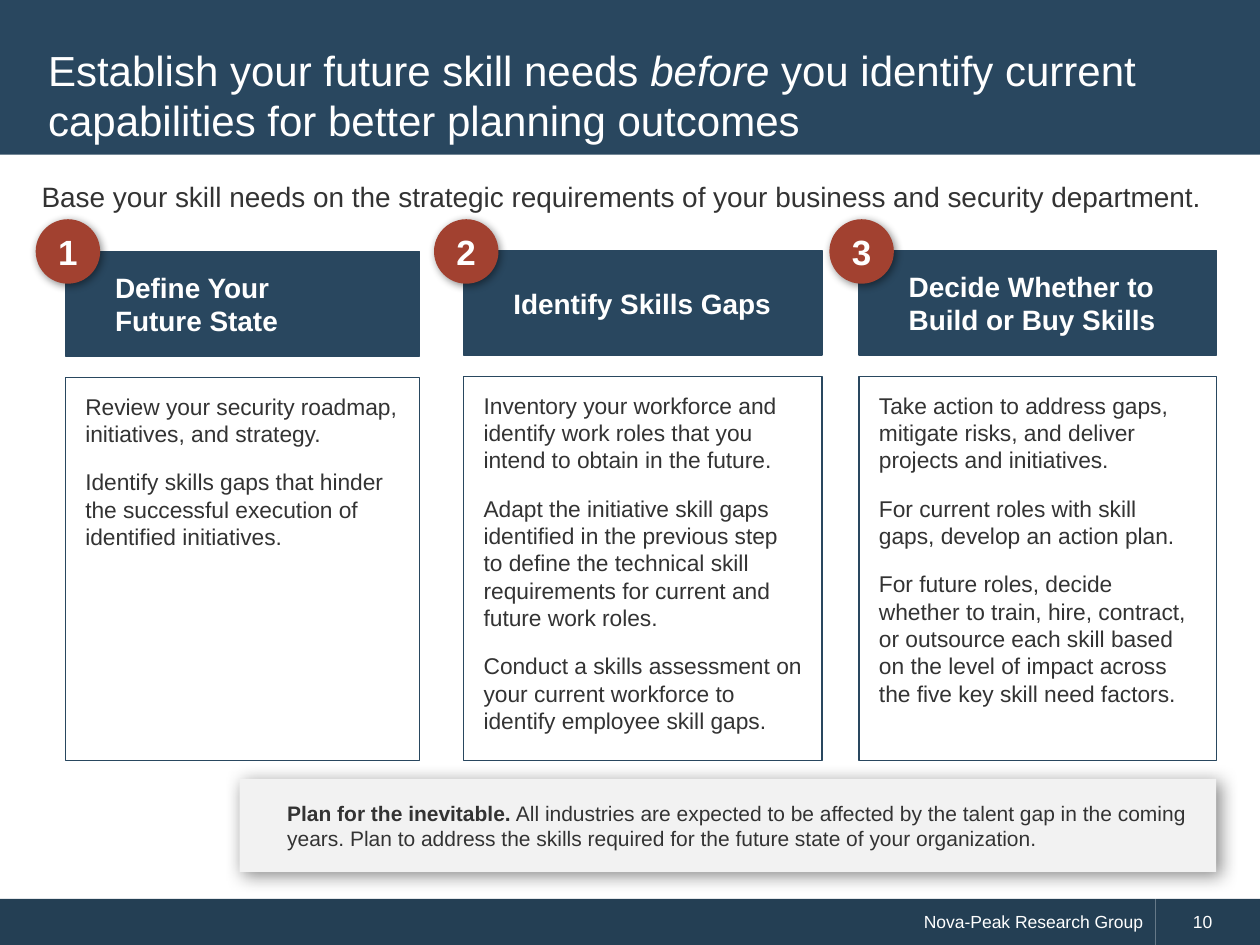
from lxml import etree
from pptx import Presentation
from pptx import util as u
from pptx.dml.color import RGBColor
from pptx.enum import shapes, text
from pptx.oxml import ns

TITLE = [("Establish your future skill needs ", ""), ("before", "i"),
         (" you identify current capabilities for better planning outcomes", "")]
LEAD = "Base your skill needs on the strategic requirements of your business and security department."
STEPS = [
    {"left": 1.32, "width": 7.14, "top": 5.07, "opacity": 88,
     "heading": ["Define Your", "Future State"],
     "actions": ["Review your security roadmap, initiatives, and strategy.",
                 "Identify skills gaps that hinder the successful execution of identified initiatives."]},
    {"left": 9.35, "width": 7.22, "top": 5.05, "opacity": 91,
     "heading": ["Identify Skills Gaps"],
     "actions": ["Inventory your workforce and identify work roles that you intend to obtain in the future.",
                 "Adapt the initiative skill gaps identified in the previous step to define the technical "
                 "skill requirements for current and future work roles.",
                 "Conduct a skills assessment on your current workforce to identify employee skill gaps."]},
    {"left": 17.32, "width": 7.2, "top": 5.05, "opacity": 87,
     "heading": ["Decide Whether to Build or Buy Skills"],
     "actions": ["Take action to address gaps, mitigate risks, and deliver projects and initiatives.",
                 "For current roles with skill gaps, develop an action plan.",
                 "For future roles, decide whether to train, hire, contract, or outsource each skill based "
                 "on the level of impact across the five key skill need factors."]},
]
CALLOUT = [("Plan for the inevitable.", "b"),
           (" All industries are expected to be affected by the talent gap in the coming years. "
            "Plan to address the skills required for the future state of your organization.", "")]
PUBLISHER = "Nova-Peak Research Group"
PAGE = "10"

THEME = {
    "font": "Arial", "navy": "29475F", "footer": "243F54", "red": "A24130", "pale": "F2F2F2",
    "white": "FFFFFF", "ink": "333333", "shadow": "000000",
    "title": 24, "lead": 16, "heading": 16, "action": 13, "badge": 20, "callout": 12, "foot": 10,
}
SLIDE_W, SLIDE_H = 25.4, 19.05
FOOT_TOP, FOOT_SPLIT = 18.12, 23.29
BADGE_SIZE, BADGE_TOP, BADGE_OVERHANG = 1.3, 4.42, 0.6
HEADING_H, PANEL_DROP, PANEL_BOTTOM = 2.11, 2.54, 15.33
INSETS = (0.25, 0.13, 0.25, 0.13)


def colour(name):
    return RGBColor.from_string(THEME[name])


def add_block(parent, box, fill=None, line=None, kind=shapes.MSO_SHAPE.RECTANGLE):
    block = parent.add_shape(kind, *map(u.Cm, box))
    block.shadow.inherit = False
    block.fill.solid()
    block.fill.fore_color.rgb = colour(fill)
    if line:
        block.line.color.rgb = colour(line)
        block.line.width = u.Pt(0.75)
    else:
        block.line.fill.background()
    return block


def add_label(parent, box):
    return parent.add_textbox(*map(u.Cm, box))


def write(target, paragraphs, size, ink, align="LEFT", anchor="MIDDLE", insets=INSETS, gap=0):
    frame = target.text_frame
    frame.word_wrap = True
    frame.vertical_anchor = text.MSO_ANCHOR[anchor]
    frame.margin_left, frame.margin_top, frame.margin_right, frame.margin_bottom = map(u.Cm, insets)
    for index, pieces in enumerate(paragraphs):
        paragraph = frame.add_paragraph() if index else frame.paragraphs[0]
        paragraph.alignment = text.PP_ALIGN[align]
        paragraph.space_before = paragraph.space_after = u.Pt(gap)
        for wording, style in pieces:
            run = paragraph.add_run()
            run.text = wording
            run.font.name = THEME["font"]
            run.font.size = u.Pt(THEME[size])
            run.font.color.rgb = colour(ink)
            run.font.bold = style == "b"
            run.font.italic = style == "i"


def cast_shadow(block, blur, distance):
    effects = block.element.spPr.find(ns.qn("a:effectLst"))
    shadow = etree.SubElement(effects, ns.qn("a:outerShdw"), blurRad=str(u.Pt(blur)),
                              dist=str(u.Pt(distance)), dir="2700000", algn="tl", rotWithShape="0")
    tint = etree.SubElement(shadow, ns.qn("a:srgbClr"), val=THEME["shadow"])
    etree.SubElement(tint, ns.qn("a:alpha"), val="45000")


def set_opacity(block, percent):
    tint = block.element.spPr.find(ns.qn("a:solidFill"))[0]
    etree.SubElement(tint, ns.qn("a:alpha"), val=str(percent * 1000))


def add_step(slide, number, step):
    group = slide.shapes.add_group_shape().shapes
    left, width, top = step["left"], step["width"], step["top"]
    heading = add_block(group, (left, top, width, HEADING_H), "navy", "navy")
    write(heading, [[(line, "b")] for line in step["heading"]], "heading", "white",
          insets=(1, 0.13, 0.25, 0.13))
    panel_top = top + PANEL_DROP
    panel = add_block(group, (left, panel_top, width, PANEL_BOTTOM - panel_top), "white", "navy")
    set_opacity(panel, step["opacity"])
    write(panel, [[(action, "")] for action in step["actions"]], "action", "ink",
          anchor="TOP", insets=(0.4, 0.3, 0.4, 0.3), gap=6)
    badge = add_block(group, (left - BADGE_OVERHANG, BADGE_TOP, BADGE_SIZE, BADGE_SIZE), "red",
                      kind=shapes.MSO_SHAPE.OVAL)
    cast_shadow(badge, 5, 1.41)
    write(badge, [[(str(number), "b")]], "badge", "white", align="CENTER")


def main():
    """Build the slide on planning future skill needs in three steps."""
    deck = Presentation()
    deck.slide_width, deck.slide_height = u.Cm(SLIDE_W), u.Cm(SLIDE_H)
    slide = deck.slides.add_slide(deck.slide_layouts[6])

    foot_h = SLIDE_H - FOOT_TOP
    publisher = add_block(slide.shapes, (0, FOOT_TOP, FOOT_SPLIT, foot_h), "footer")
    write(publisher, [[(PUBLISHER, "")]], "foot", "white", align="RIGHT")
    page = add_block(slide.shapes, (FOOT_SPLIT, FOOT_TOP, SLIDE_W - FOOT_SPLIT, foot_h), "footer")
    write(page, [[(PAGE, "")]], "foot", "white", insets=(0.76, 0.13, 0.25, 0.13))

    add_block(slide.shapes, (0, 0, SLIDE_W, 3.12), "navy")
    title = add_label(slide.shapes, (0.72, 0.7, 23.95, 2.43))
    write(title, [TITLE], "title", "white")
    lead = add_label(slide.shapes, (0.59, 3.48, 24.28, 0.94))
    write(lead, [[(LEAD, "")]], "lead", "ink", anchor="TOP")

    for number, step in enumerate(STEPS, 1):
        add_step(slide, number, step)

    callout = add_block(slide.shapes, (4.83, 15.7, 19.69, 1.88), "pale")
    cast_shadow(callout, 10, 2.83)
    write(callout, [CALLOUT], "callout", "ink", insets=(0.96, 0.13, 0.25, 0.13))
    deck.save("out.pptx")


if __name__ == "__main__":
    main()
